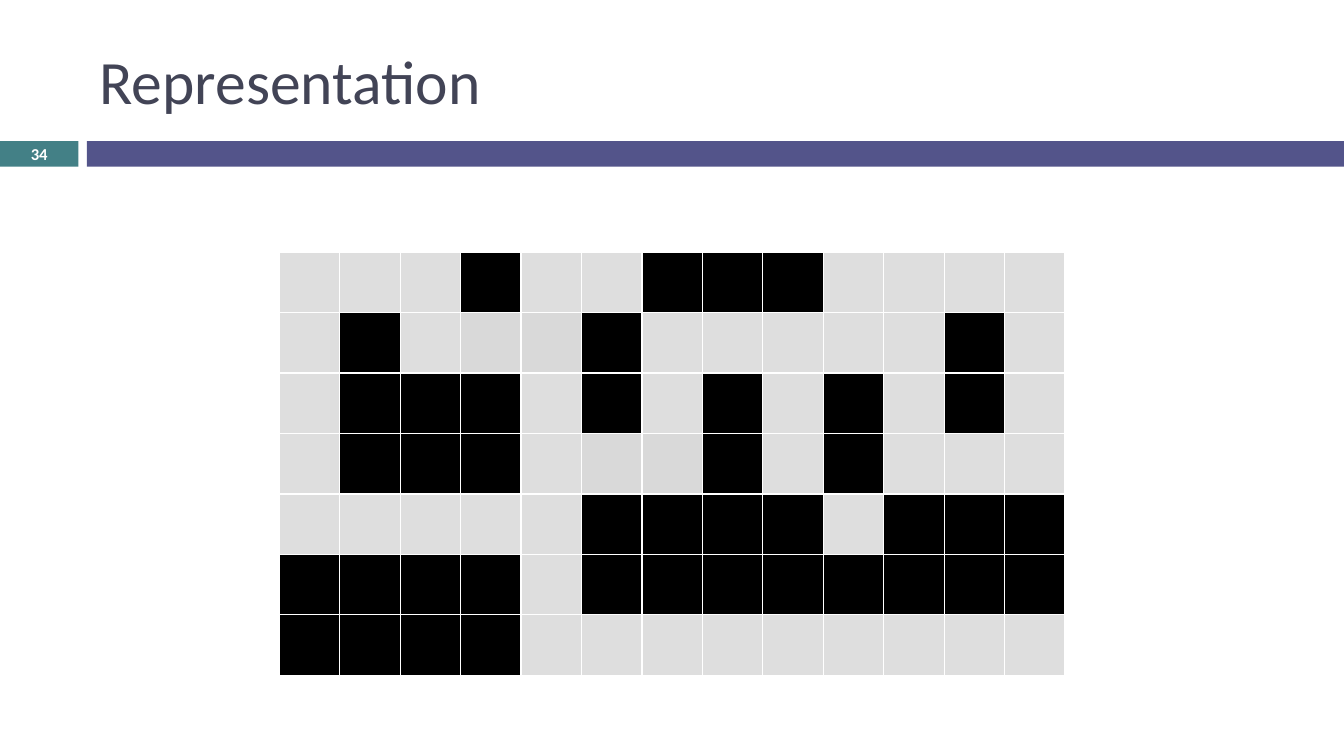
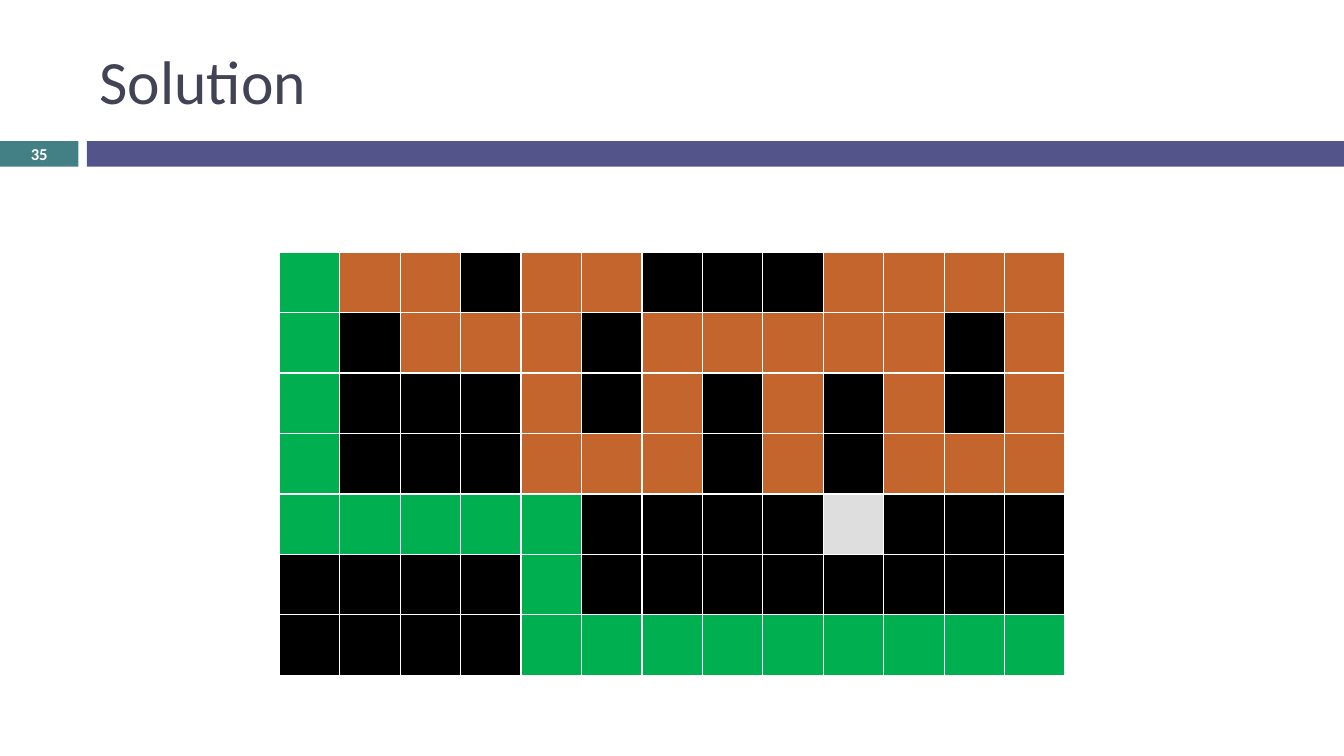
from lxml import etree
from pptx import Presentation
from pptx import util as u
from pptx.dml.color import RGBColor
from pptx.enum import shapes, text
from pptx.oxml.ns import qn

FONT = "Calibri"
COLORS = {
    "title": "424456",
    "band": "53548A",
    "number": "438086",
    "white": "FFFFFF",
    "wall": "000000",
    "free": "DEDEDE",
    "free_dim": "D9D9D9",
    "path": "00B050",
    "explored": "C4652D",
}
CELL_KINDS = {"#": "wall", ".": "free", "-": "free_dim", "P": "path", "x": "explored"}

SLIDE_WIDTH, SLIDE_HEIGHT = u.Cm(33.87), u.Cm(19.05)
TITLE_BOX = (u.Cm(2.26), u.Cm(0.64), u.Cm(30.2), u.Cm(2.74))
BAND_TOP, BAND_HEIGHT = u.Cm(3.56), u.Cm(0.64)
NUMBER_WIDTH, BAND_LEFT = u.Cm(1.98), u.Cm(2.19)
MAZE_BOX = (u.Cm(7.04), u.Cm(6.35), u.Cm(19.81), u.Cm(10.67))

MAZE = [
    "...#..###....",
    ".#.--#.....#.",
    ".###.#.#.#.#.",
    ".###.--#.#...",
    ".....####.###",
    "####.########",
    "####.........",
]
SOLVED_MAZE = [
    "Pxx#xx###xxxx",
    "P#xxx#xxxxx#x",
    "P###x#x#x#x#x",
    "P###xxx#x#xxx",
    "PPPPP####.###",
    "####P########",
    "####PPPPPPPPP",
]


def rgb(name):
    return RGBColor.from_string(COLORS[name])


def write(frame, words, size, color, bold=False):
    frame.text = words
    frame.word_wrap = True
    frame.vertical_anchor = text.MSO_ANCHOR.MIDDLE
    font = frame.paragraphs[0].runs[0].font
    font.name, font.size, font.bold = FONT, u.Pt(size), bold
    font.color.rgb = rgb(color)


def add_bar(slide, box, color):
    bar = slide.shapes.add_shape(shapes.MSO_SHAPE.RECTANGLE, *box)
    bar.shadow.inherit = False
    bar.fill.solid()
    bar.fill.fore_color.rgb = rgb(color)
    bar.line.fill.background()
    return bar


def add_header(slide, title, number):
    """Place the title and, below it, the page number beside the wide band."""
    heading = slide.shapes.add_textbox(*TITLE_BOX)
    write(heading.text_frame, title, 44, "title")

    add_bar(slide, (BAND_LEFT, BAND_TOP, SLIDE_WIDTH - BAND_LEFT, BAND_HEIGHT), "band")
    number_bar = add_bar(slide, (0, BAND_TOP, NUMBER_WIDTH, BAND_HEIGHT), "number")
    frame = number_bar.text_frame
    frame.margin_top = frame.margin_bottom = 0
    write(frame, str(number), 11.9, "white", bold=True)
    frame.paragraphs[0].alignment = text.PP_ALIGN.CENTER


def set_borders(cell, color, width):
    properties = cell._tc.get_or_add_tcPr()
    for index, side in enumerate(("lnL", "lnR", "lnT", "lnB")):
        line = etree.Element(qn(f"a:{side}"), w=str(u.Pt(width)))
        fill = etree.SubElement(line, qn("a:solidFill"))
        etree.SubElement(fill, qn("a:srgbClr"), val=COLORS[color])
        properties.insert(index, line)


def add_maze(slide, box, maze):
    """Draw one table cell for each character, coloured by its kind."""
    left, top, width, height = box
    grid = slide.shapes.add_table(len(maze), len(maze[0]), left, top, width, height).table
    for column in grid.columns:
        column.width = round(width / len(maze[0]))
    for row, kinds in zip(grid.rows, maze):
        row.height = round(height / len(maze))
        for cell, kind in zip(row.cells, kinds):
            cell.fill.solid()
            cell.fill.fore_color.rgb = rgb(CELL_KINDS[kind])
            set_borders(cell, "white", 1)


def add_maze_slide(deck, title, number, maze):
    slide = deck.slides.add_slide(deck.slide_layouts[6])
    add_header(slide, title, number)
    add_maze(slide, MAZE_BOX, maze)


def main():
    deck = Presentation()
    deck.slide_width, deck.slide_height = SLIDE_WIDTH, SLIDE_HEIGHT
    add_maze_slide(deck, "Representation", 34, MAZE)
    add_maze_slide(deck, "Solution", 35, SOLVED_MAZE)
    deck.save("out.pptx")


if __name__ == "__main__":
    main()
